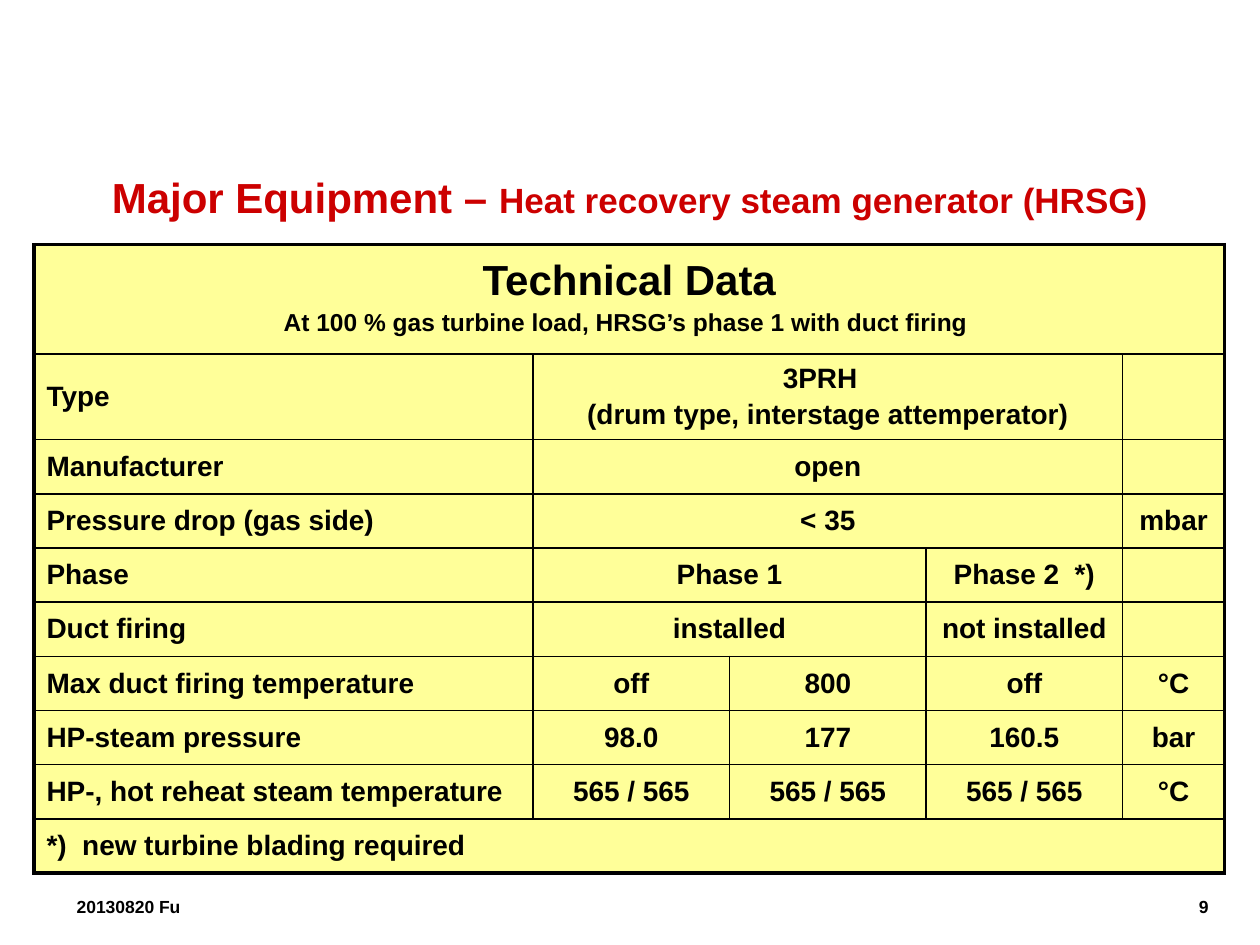
import pptx
import pptx.util
import pptx.dml.color
import pptx.enum.text
import pptx.oxml
import pptx.oxml.ns
from lxml import etree

Inches, Pt = pptx.util.Inches, pptx.util.Pt
RGBColor = pptx.dml.color.RGBColor
PP_ALIGN = pptx.enum.text.PP_ALIGN
MIDDLE = pptx.enum.text.MSO_ANCHOR.MIDDLE
qn = pptx.oxml.ns.qn

BLACK = RGBColor(0x00, 0x00, 0x00)
RED = RGBColor(0xCC, 0x00, 0x00)
YELLOW = RGBColor(0xFF, 0xFF, 0x99)
FONT = "Arial"
OUTER, INNER = 2.25, 1

# Content: each row lists (text, columns spanned)
TITLE = [("Major Equipment – ", 24), ("Heat recovery steam generator (HRSG)", 20)]
HEADING = [("Technical Data", 24),
           ("At 100 % gas turbine load, HRSG’s phase 1 with duct firing ", 14)]
ROWS = [
    [("Type", 1), ("3PRH  \n(drum type, interstage attemperator)", 3), ("", 1)],
    [("Manufacturer", 1), ("open", 3), ("", 1)],
    [("Pressure drop (gas side)", 1), ("< 35", 3), ("mbar", 1)],
    [("Phase", 1), ("Phase 1", 2), ("Phase 2  *)", 1), ("", 1)],
    [("Duct firing", 1), ("installed", 2), ("not installed ", 1), ("", 1)],
    [("Max duct firing temperature", 1), ("off", 1), ("800", 1), ("off", 1), ("°C", 1)],
    [("HP-steam pressure", 1), ("98.0", 1), ("177", 1), ("160.5", 1), ("bar", 1)],
    [("HP-, hot reheat steam temperature", 1), ("565 / 565", 1), ("565 / 565", 1),
     ("565 / 565", 1), ("°C", 1)],
    [("*)  new turbine blading required", 5)],
]
FOOTERS = [("20130820 Fu", (0.51, 7.06, 3.71, 0.29), PP_ALIGN.LEFT),
           ("9", (7.36, 7.06, 2.33, 0.31), PP_ALIGN.RIGHT)]
COLUMN_WIDTHS = [3.96, 1.56, 1.56, 1.56, 0.81]
ROW_HEIGHTS = [0.87, 0.68] + [0.43] * 8


def write_paragraph(paragraph, runs, align, color=BLACK, before=0, line=None):
    """Fill a paragraph with (text, size) runs; before is a percentage."""
    paragraph.alignment = align
    if line:
        paragraph.line_spacing = line
    if before:
        spacing = etree.SubElement(paragraph._p.get_or_add_pPr(), qn("a:spcBef"))
        etree.SubElement(spacing, qn("a:spcPct"), val=str(before * 1000))
    for text, size in runs:
        run = paragraph.add_run()
        run.text = text
        run.font.color.rgb = color
        style = {"size": Pt(size), "name": FONT, "bold": True}
        for key, value in style.items():
            setattr(run.font, key, value)


def add_text(slide, box, runs, align, **options):
    frame = slide.shapes.add_textbox(*map(Inches, box)).text_frame
    frame.word_wrap = True
    write_paragraph(frame.paragraphs[0], runs, align, **options)


def write_cell(cell, paragraphs, align, **options):
    """Each paragraph is a (text, size) pair."""
    cell.vertical_anchor = MIDDLE
    for index, run in enumerate(paragraphs):
        frame = cell.text_frame
        paragraph = frame.add_paragraph() if index else frame.paragraphs[0]
        write_paragraph(paragraph, [run], align, **options)


def style_cell(cell, row, column):
    """Thick lines on the table's outside, thin ones inside, yellow fill."""
    end = column + (cell.span_width if cell.is_merge_origin else 1)
    outside = {"L": column == 0, "R": end == len(COLUMN_WIDTHS),
               "T": row == 0, "B": row == len(ROW_HEIGHTS) - 1}
    properties = cell._tc.get_or_add_tcPr()
    for side, is_outer in outside.items():
        width = Pt(OUTER if is_outer else INNER)
        border = etree.SubElement(properties, qn("a:ln" + side), w=str(int(width)))
        fill = etree.SubElement(border, qn("a:solidFill"))
        etree.SubElement(fill, qn("a:srgbClr"), val=str(BLACK))
    cell.fill.solid()
    cell.fill.fore_color.rgb = YELLOW


def add_data_table(slide):
    size = len(ROW_HEIGHTS), len(COLUMN_WIDTHS)
    table = slide.shapes.add_table(*size, *map(Inches, (0.27, 1.94, 9.45, 4.99))).table
    table.first_row = table.horz_banding = False
    for column, width in zip(table.columns, COLUMN_WIDTHS):
        column.width = Inches(width)
    for row, height in zip(table.rows, ROW_HEIGHTS):
        row.height = Inches(height)

    # Heading across all columns
    table.cell(0, 0).merge(table.cell(0, size[1] - 1))
    write_cell(table.cell(0, 0), HEADING, PP_ALIGN.CENTER, before=30, line=0.9)

    # Data rows: labels left, values and units centred
    for row, entries in enumerate(ROWS, start=1):
        column = 0
        for text, span in entries:
            cell = table.cell(row, column)
            if span > 1:
                cell.merge(table.cell(row, column + span - 1))
            if text:
                align = PP_ALIGN.CENTER if column else PP_ALIGN.LEFT
                write_cell(cell, [(part, 16) for part in text.split("\n")], align, before=20)
            column += span

    for row in range(size[0]):
        for column in range(size[1]):
            style_cell(table.cell(row, column), row, column)


def main():
    deck = pptx.Presentation()
    deck.slide_width, deck.slide_height = Inches(10), Inches(7.5)
    slide = deck.slides.add_slide(deck.slide_layouts[6])

    # Footer, title and table
    for text, box, align in FOOTERS:
        add_text(slide, box, [(text, 10)], align)
    add_text(slide, (0, 1.31, 10, 0.5), TITLE, PP_ALIGN.CENTER, color=RED, before=50)
    add_data_table(slide)
    deck.save("out.pptx")


if __name__ == "__main__":
    main()
